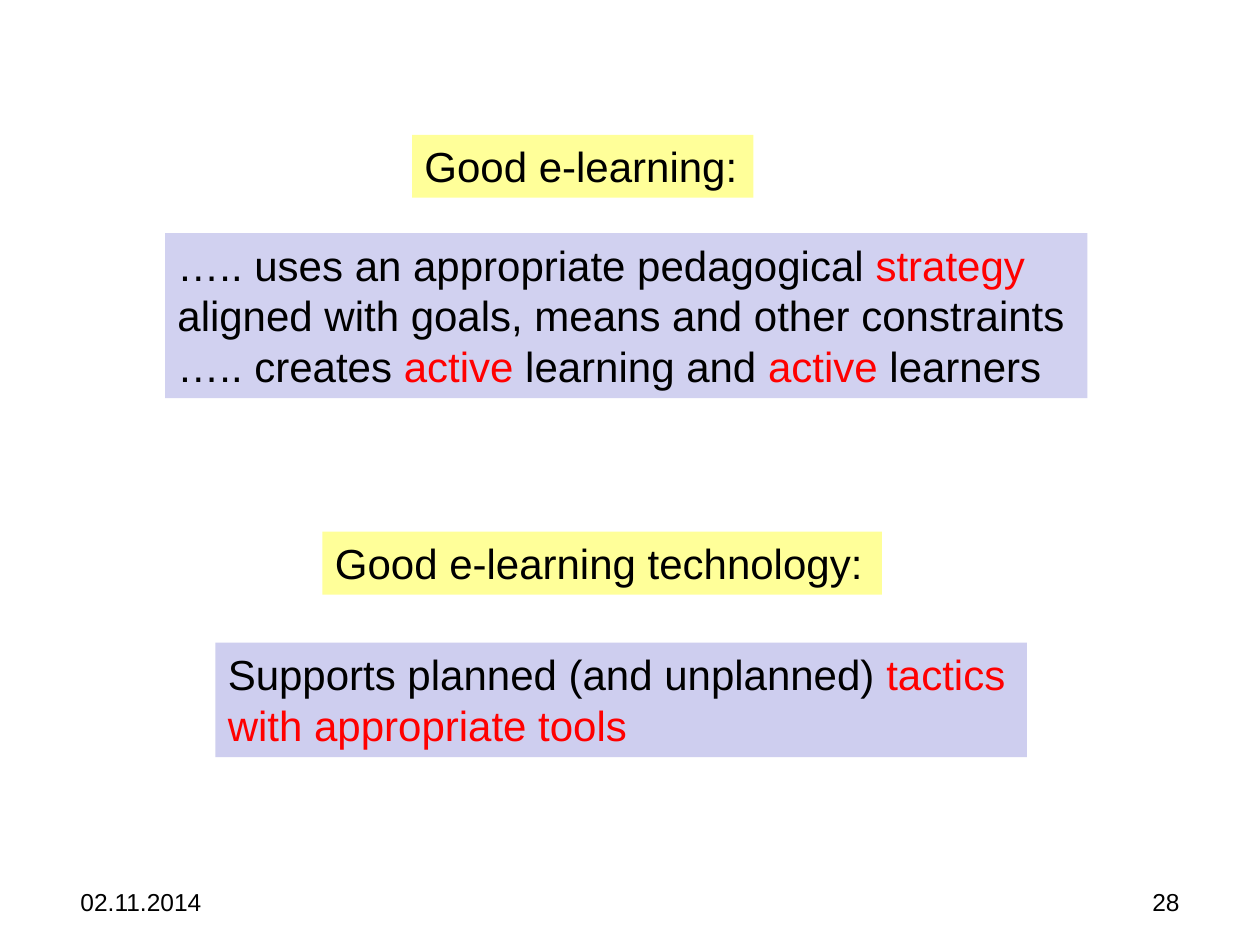
from pptx import Presentation
from pptx import util as u
from pptx.dml.color import RGBColor
from pptx.enum import shapes, text

BLACK = RGBColor(0, 0, 0)
RED = RGBColor(0xFF, 0, 0)
YELLOW = RGBColor(0xFF, 0xFF, 0x99)
LAVENDER = RGBColor(0xD1, 0xD1, 0xF0)
LILAC = RGBColor(0xCE, 0xCE, 0xEF)

WIDTH, HEIGHT = 10, 7.5
HEADING_HEIGHT = 0.5


def write(sp, paragraphs, size=24, align=text.PP_ALIGN.LEFT, spacing=None, top=0.05):
    """Fill a shape with paragraphs, each a list of (words, colour) runs."""
    tf = sp.text_frame
    tf.word_wrap = True
    tf.auto_size = text.MSO_AUTO_SIZE.NONE
    tf.vertical_anchor = text.MSO_ANCHOR.TOP
    tf.margin_top = u.Inches(top)
    for i, runs in enumerate(paragraphs):
        p = tf.add_paragraph() if i else tf.paragraphs[0]
        p.alignment = align
        if spacing:
            p.line_spacing = spacing
        for words, colour in runs:
            if words == "\n":
                p.add_line_break()
                continue
            r = p.add_run()
            r.text = words
            r.font.name = "Arial"
            r.font.size = u.Pt(size)
            r.font.color.rgb = colour


def panel(s, box, fill, paragraphs):
    sp = s.shapes.add_shape(shapes.MSO_SHAPE.RECTANGLE, *map(u.Inches, box))
    sp.shadow.inherit = False
    sp.fill.solid()
    sp.fill.fore_color.rgb = fill
    sp.line.fill.background()
    write(sp, paragraphs)


def statement(s, heading_box, heading, body_box, body_fill, body):
    """A yellow heading above a tinted explanation."""
    panel(s, heading_box, YELLOW, [[(heading, BLACK)]])
    panel(s, body_box, body_fill, body)


def footer(s, left, top, width, height, date, number):
    field = width * 0.26
    fields = ((left, date, text.PP_ALIGN.LEFT),
              (left + width - field, number, text.PP_ALIGN.RIGHT))
    for x, words, align in fields:
        sp = s.shapes.add_textbox(*map(u.Inches, (x, top, field, height)))
        write(sp, [[(words, BLACK)]], size=14, align=align, spacing=0.93, top=0.08)


def main():
    prs = Presentation()
    prs.slide_width, prs.slide_height = u.Inches(WIDTH), u.Inches(HEIGHT)
    s = prs.slides.add_slide(prs.slide_layouts[6])

    footer(s, 0.54, 6.98, WIDTH - 2 * 0.54, 0.37, "02.11.2014", "28")
    statement(
        s, (3.27, 1.07, 2.71, HEADING_HEIGHT), "Good e-learning:",
        (1.31, 1.85, 7.32, 1.31), LAVENDER,
        [[("….. uses an appropriate pedagogical ", BLACK), ("strategy ", RED),
          ("\n", RED),
          ("aligned with goals, means and other constraints", BLACK)],
         [("….. creates ", BLACK), ("active ", RED), ("learning and ", BLACK),
          ("active ", RED), ("learners", BLACK)]])
    statement(
        s, (2.56, 4.22, 4.44, HEADING_HEIGHT), "Good e-learning technology:",
        (1.71, 5.1, 6.44, 0.91), LILAC,
        [[("Supports planned (and unplanned) ", BLACK), ("tactics", RED)],
         [("with appropriate tools", RED)]])

    prs.save("out.pptx")


if __name__ == "__main__":
    main()
